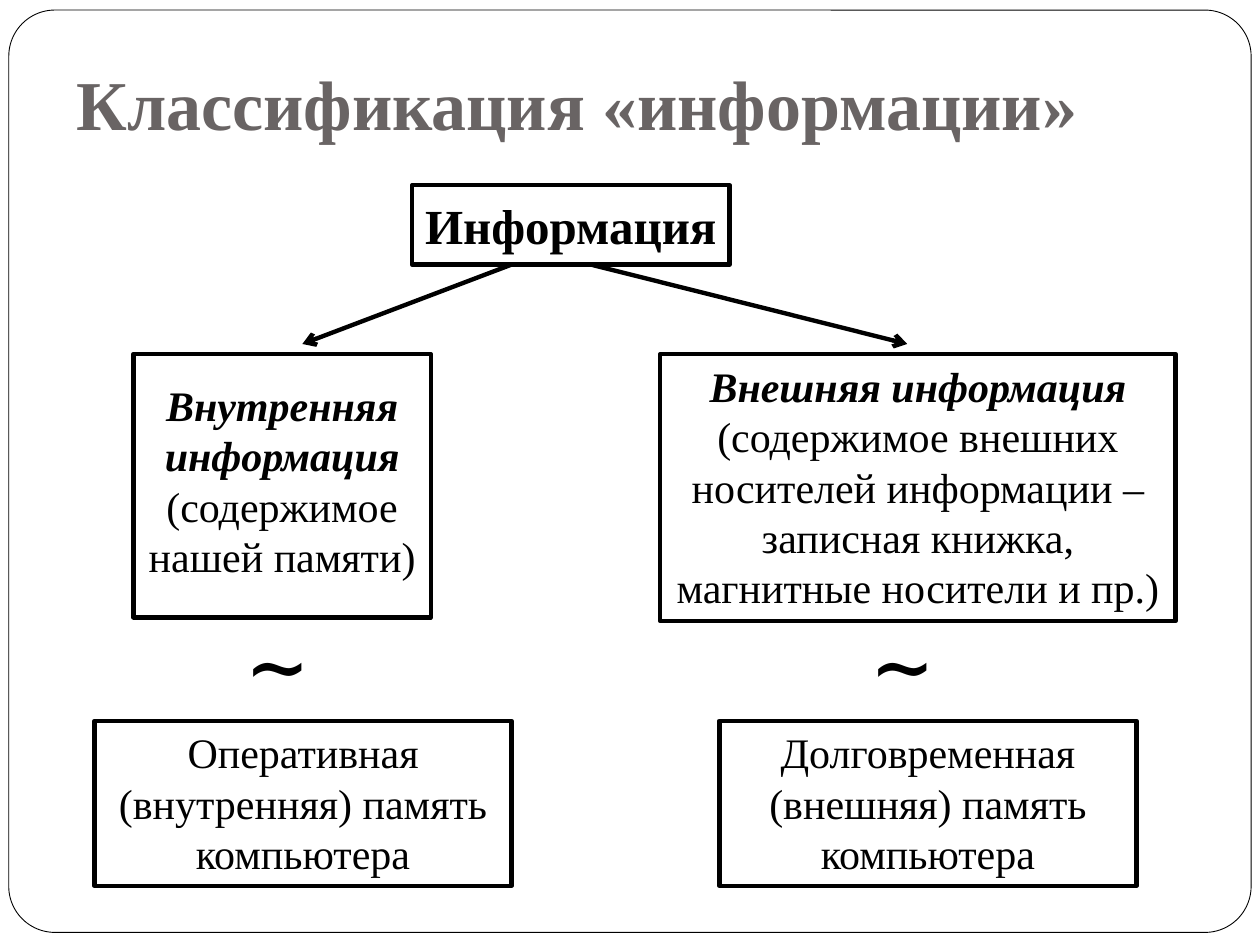
from dataclasses import dataclass

import pptx
import pptx.dml.color
import pptx.enum.shapes
import pptx.enum.text
import pptx.oxml.ns
import pptx.util
from lxml import etree
from pptx.util import Inches

ALIGN = pptx.enum.text.PP_ALIGN
ANCHOR = pptx.enum.text.MSO_ANCHOR
SHAPE = pptx.enum.shapes.MSO_SHAPE


@dataclass(frozen=True)
class Theme:
    font: str = "Times New Roman"
    ink: str = "000000"
    paper: str = "FFFFFF"
    heading: str = "696464"
    title_size: int = 40
    root_size: int = 28
    body_size: int = 24
    sign_size: int = 44
    frame_line: float = 0.5
    box_line: float = 2.5


@dataclass(frozen=True)
class Area:
    left: float
    top: float
    width: float
    height: float

    def lengths(self) -> list:
        return [Inches(v) for v in (self.left, self.top, self.width, self.height)]


@dataclass(frozen=True)
class Branch:
    """One kind of information, its arrow and its computer counterpart."""
    term: str
    meaning: str
    term_area: Area
    inset: float
    arrow_start: float
    arrow_end: float
    memory: str
    memory_left: float


THEME = Theme()
ROOT_AREA = Area(3.27, 1.47, 2.52, 0.63)
ARROW_TIP = 2.73
SIGN_OFFSET = 1.1

BRANCHES = [
    Branch("Внутренняя информация", "(содержимое нашей памяти)",
           Area(1.06, 2.81, 2.36, 2.09), 0.2, 4.06, 2.4,
           "Оперативная (внутренняя) память компьютера", 0.75),
    Branch("Внешняя информация",
           "(содержимое внешних носителей информации – записная книжка, "
           "магнитные носители и пр.)",
           Area(5.24, 2.81, 4.09, 2.12), 0.05, 4.69, 7.2,
           "Долговременная (внешняя) память компьютера", 5.71),
]


def rgb(value: str):
    return pptx.dml.color.RGBColor.from_string(value)


def write(frame, text: str, *, size: int, color: str = THEME.ink, bold=False,
          italic=False, align=ALIGN.CENTER, add=False) -> None:
    """Fill the first paragraph, or add another one after it."""
    paragraph = frame.add_paragraph() if add else frame.paragraphs[0]
    paragraph.alignment = align
    run = paragraph.add_run()
    run.text = text
    run.font.name = THEME.font
    run.font.size = pptx.util.Pt(size)
    run.font.color.rgb = rgb(color)
    run.font.bold = bold
    run.font.italic = italic


def set_frame(frame, *, anchor=ANCHOR.TOP, top=0.05, bottom=0.05, wrap=True):
    frame.word_wrap = wrap
    frame.vertical_anchor = anchor
    frame.margin_left = frame.margin_right = Inches(0.1)
    frame.margin_top, frame.margin_bottom = Inches(top), Inches(bottom)
    return frame


def outline(shape, width: float) -> None:
    shape.shadow.inherit = False
    shape.line.color.rgb = rgb(THEME.ink)
    shape.line.width = pptx.util.Pt(width)


def add_box(slide, area: Area, *, inset: float = 0.05, wrap: bool = True):
    """Draw an unfilled box and return its text frame."""
    box = slide.shapes.add_shape(SHAPE.RECTANGLE, *area.lengths())
    box.fill.background()
    outline(box, THEME.box_line)
    return set_frame(box.text_frame, top=inset, bottom=inset, wrap=wrap)


def add_arrow(slide, start: tuple[float, float], end: tuple[float, float]) -> None:
    arrow = slide.shapes.add_connector(
        pptx.enum.shapes.MSO_CONNECTOR.STRAIGHT,
        *[Inches(v) for v in (*start, *end)])
    arrow.line.color.rgb = rgb(THEME.ink)
    arrow.line.width = pptx.util.Pt(THEME.box_line)
    qn = pptx.oxml.ns.qn
    etree.SubElement(arrow.line._get_or_add_ln(), qn("a:tailEnd"), type="arrow")
    etree.SubElement(arrow._element.spPr, qn("a:effectLst"))


def add_branch(slide, branch: Branch) -> None:
    # Kind of information
    term = add_box(slide, branch.term_area, inset=branch.inset)
    write(term, branch.term, size=THEME.body_size, bold=True, italic=True)
    write(term, branch.meaning, size=THEME.body_size, add=True)
    add_arrow(slide, (branch.arrow_start, ROOT_AREA.top + ROOT_AREA.height),
              (branch.arrow_end, ARROW_TIP))

    # Similarity sign
    sign_area = Area(branch.memory_left + SIGN_OFFSET, 4.85, 0.71, 0.84)
    sign = slide.shapes.add_textbox(*sign_area.lengths())
    write(set_frame(sign.text_frame), "∼", size=THEME.sign_size, bold=True,
          align=ALIGN.LEFT)

    # Computer memory
    memory = add_box(slide, Area(branch.memory_left, 5.72, 3.31, 1.31))
    write(memory, branch.memory, size=THEME.body_size)


def main() -> None:
    deck = pptx.Presentation()
    deck.slide_width, deck.slide_height = Inches(10), Inches(7.5)
    slide = deck.slides.add_slide(deck.slide_layouts[6])

    # Slide frame
    border = slide.shapes.add_shape(SHAPE.ROUNDED_RECTANGLE,
                                    *Area(0.07, 0.08, 9.86, 7.32).lengths())
    border.adjustments[0] = 0.05
    border.fill.solid()
    border.fill.fore_color.rgb = rgb(THEME.paper)
    outline(border, THEME.frame_line)

    # Title
    title = slide.shapes.add_textbox(*Area(0.51, 0, 8.5, 1.25).lengths())
    write(set_frame(title.text_frame, anchor=ANCHOR.BOTTOM, bottom=0.1),
          "Классификация «информации»", size=THEME.title_size,
          color=THEME.heading, bold=True, align=ALIGN.LEFT)

    # Classification tree
    root = add_box(slide, ROOT_AREA, inset=0.08, wrap=False)
    write(root, "Информация", size=THEME.root_size, bold=True)
    for branch in BRANCHES:
        add_branch(slide, branch)

    deck.save("out.pptx")


if __name__ == "__main__":
    main()
